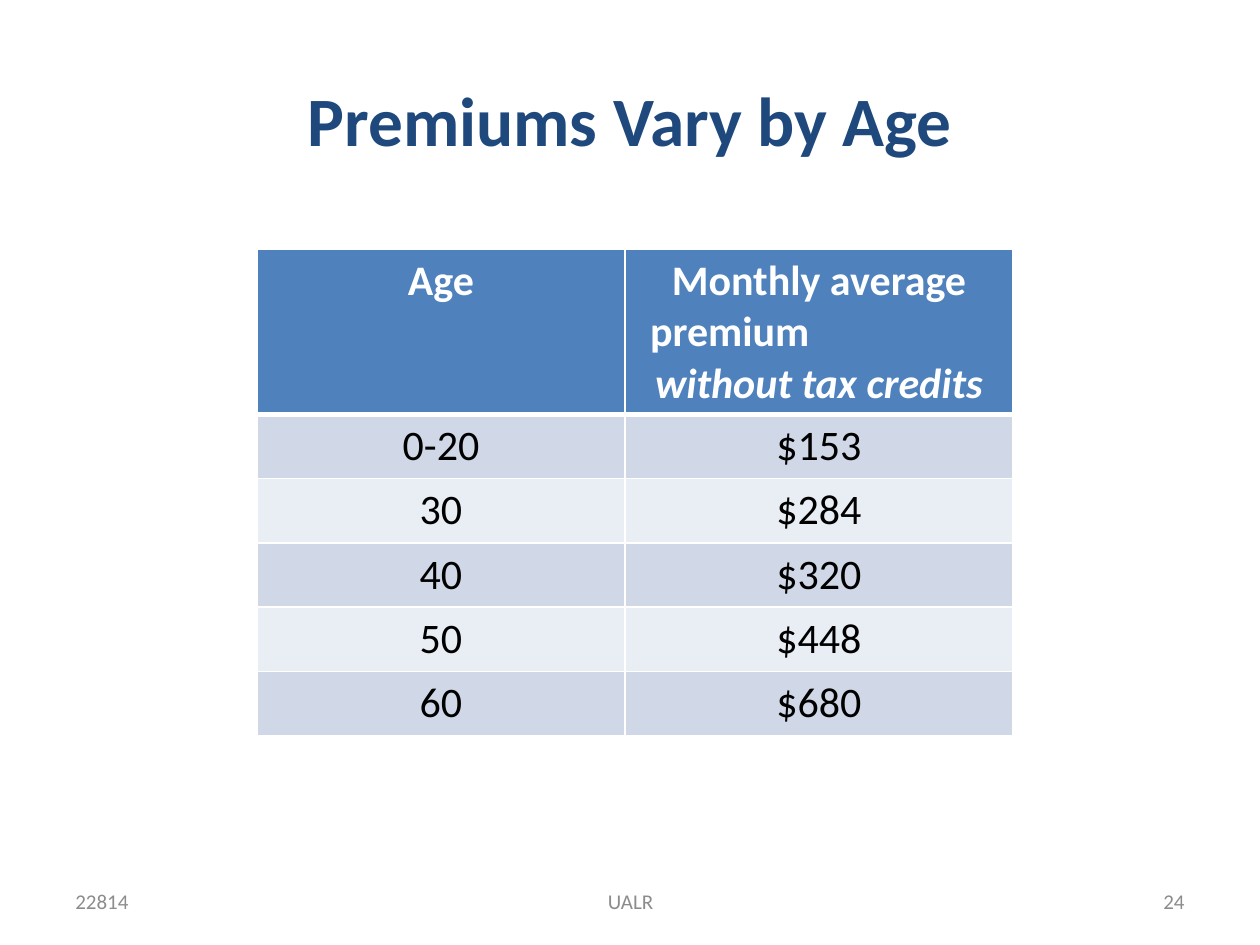
from pptx import Presentation, util as u
from pptx.dml.color import RGBColor
from pptx.enum import text
from pptx.oxml import parse_xml
from pptx.oxml.ns import nsdecls

LEFT, CENTER, RIGHT = text.PP_ALIGN.LEFT, text.PP_ALIGN.CENTER, text.PP_ALIGN.RIGHT
TOP, MIDDLE = text.MSO_ANCHOR.TOP, text.MSO_ANCHOR.MIDDLE


def color(value):
    return RGBColor.from_string(value)


def write(para, words, align, tint, **formats):
    para.alignment = align
    span = para.add_run()
    span.text = words
    span.font.color.rgb = color(tint)
    for name, value in {"name": "Calibri", **formats}.items():
        setattr(span.font, name, value)


deck = Presentation()
deck.slide_width, deck.slide_height = u.Inches(10), u.Inches(7.5)
page = deck.slides.add_slide(deck.slide_layouts[6])

# Title and footer: place in inches, anchor, top inset, words and their format
title_format = {"size": u.Pt(39.6), "bold": True}
footer_format = {"size": u.Pt(12)}
texts = [
    ((0.5, 0.61, 9, 1.25), TOP, 0, "Premiums Vary by Age", CENTER, "1F497D", title_format),
    ((0.5, 6.95, 2.33, 0.4), MIDDLE, 0.05, "22814", LEFT, "8C8C8C", footer_format),
    ((3.42, 6.95, 3.17, 0.4), MIDDLE, 0.05, "UALR", CENTER, "8C8C8C", footer_format),
    ((7.17, 6.95, 2.33, 0.4), MIDDLE, 0.05, "24", RIGHT, "8C8C8C", footer_format),
]
for place, anchor, inset, words, align, tint, formats in texts:
    box = page.shapes.add_textbox(*map(u.Inches, place))
    frame = box.text_frame
    settings = {"word_wrap": True, "vertical_anchor": anchor, "margin_top": u.Inches(inset)}
    for name, value in settings.items():
        setattr(frame, name, value)
    write(frame.paragraphs[0], words, align, tint, **formats)

# Premium table
header = [
    [("Age", CENTER, False)],
    [("Monthly average", CENTER, False), ("premium", LEFT, False),
     ("without tax credits", CENTER, True)],
]
premiums = {"0-20": "$153", "30": "$284", "40": "$320", "50": "$448", "60": "$680"}
rows = [header] + [[[(words, CENTER, False)] for words in pair] for pair in premiums.items()]
column_widths = [2.92, 3.08]
row_heights = [1.31] + [0.51] * len(premiums)

table = page.shapes.add_table(
    len(rows), len(column_widths), u.Inches(2.04), u.Inches(1.98),
    u.Inches(sum(column_widths)), u.Inches(sum(row_heights))).table
for column, width in zip(table.columns, column_widths):
    column.width = u.Inches(width)

for r, (row, height) in enumerate(zip(rows, row_heights)):
    table.rows[r].height = u.Inches(height)
    is_header = r == 0
    fill = "4F81BD" if is_header else ("E9EDF4", "D0D8E8")[r % 2]
    tint = "FFFFFF" if is_header else "000000"
    # White rules, heavier between header and body
    borders = {"L": 1, "R": 1, "T": 3 if r == 1 else 1, "B": 3 if is_header else 1}
    for c, lines in enumerate(row):
        cell = table.cell(r, c)
        cell.fill.solid()
        cell.fill.fore_color.rgb = color(fill)
        for index, (words, align, italic) in enumerate(lines):
            frame = cell.text_frame
            para = frame.add_paragraph() if index else frame.paragraphs[0]
            write(para, words, align, tint, size=u.Pt(24), bold=is_header, italic=italic)
            if align == LEFT:
                para._p.get_or_add_pPr().set("marL", str(u.Inches(0.1)))
        properties = cell._tc.get_or_add_tcPr()
        for position, (side, points) in enumerate(borders.items()):
            properties.insert(position, parse_xml(
                f'<a:ln{side} {nsdecls("a")} w="{u.Pt(points)}"><a:solidFill>'
                f'<a:srgbClr val="FFFFFF"/></a:solidFill></a:ln{side}>'))

deck.save("out.pptx")
